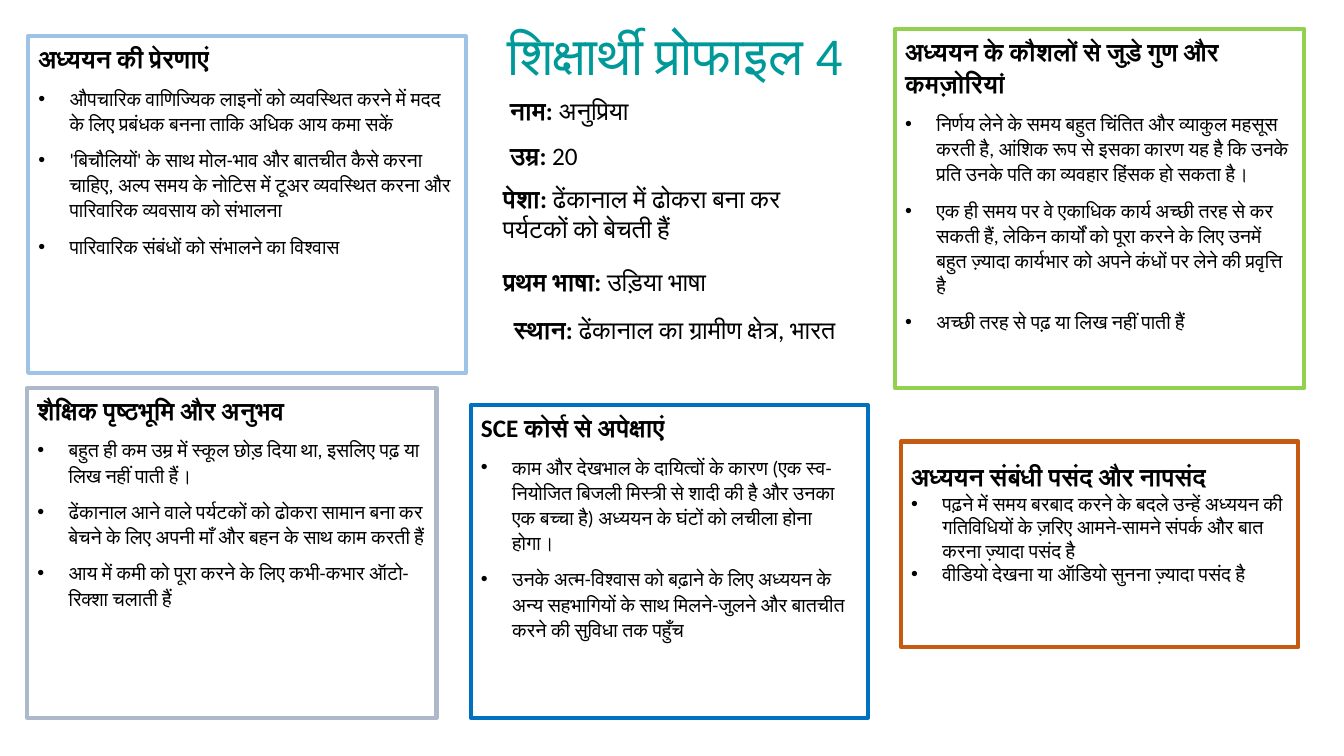
import dataclasses

import lxml.etree
import pptx
import pptx.dml.color
import pptx.enum.shapes
import pptx.enum.text
import pptx.oxml.ns
import pptx.util


@dataclasses.dataclass(frozen=True)
class Theme:
    font: str = "Calibri"
    ink: str = "000000"
    paper: str = "FFFFFF"
    title: str = "009999"
    motives: str = "9DC3E6"
    skills: str = "92D050"
    background: str = "ADB9CA"
    expectations: str = "0070C0"
    preferences: str = "C55A11"
    title_size: int = 38
    heading_size: int = 18
    list_size: int = 14
    border: int = 3
    indent: float = 0.31


def rgb(value):
    return pptx.dml.color.RGBColor.from_string(value)


class ProfileSlide:
    GRID = 100

    def __init__(self, prs, theme):
        self.prs = prs
        self.theme = theme
        self.slide = prs.slides.add_slide(prs.slide_layouts.get_by_name("Comparison"))
        self.bodies = [sp for sp in self.slide.placeholders if sp.placeholder_format.idx]

    def box(self, col, row, cols, rows):
        w = self.prs.slide_width / self.GRID
        h = self.prs.slide_height / self.GRID
        return [round(n) for n in (col * w, row * h, cols * w, rows * h)]

    def place(self, sp, area):
        sp.left, sp.top, sp.width, sp.height = self.box(*area)

    def frame(self, sp, wrap=True):
        tf = sp.text_frame
        tf.word_wrap = wrap
        tf.auto_size = pptx.enum.text.MSO_AUTO_SIZE.NONE
        tf.vertical_anchor = pptx.enum.text.MSO_ANCHOR.TOP
        return tf

    def run(self, p, text, size, bold=False, color=None):
        r = p.add_run()
        r.text = text
        r.font.size = pptx.util.Pt(size)
        r.font.bold = bold
        r.font.color.rgb = rgb(color or self.theme.ink)
        r.font.name = self.theme.font
        cs = lxml.etree.SubElement(r.font._element, pptx.oxml.ns.qn("a:cs"))
        cs.set("typeface", self.theme.font)

    def paragraph(self, p, spacing=1.0, before=0, after=0):
        p.alignment = pptx.enum.text.PP_ALIGN.LEFT
        p.line_spacing = spacing
        p.space_before = pptx.util.Pt(before)
        p.space_after = pptx.util.Pt(after)

    def bullet(self, p, char=None):
        pPr = p._p.get_or_add_pPr()
        indent = pptx.util.Inches(self.theme.indent) if char else 0
        pPr.set("marL", str(indent))
        pPr.set("indent", str(-indent))
        if char:
            font = lxml.etree.SubElement(pPr, pptx.oxml.ns.qn("a:buFont"))
            font.set("typeface", "Arial")
            lxml.etree.SubElement(pPr, pptx.oxml.ns.qn("a:buChar")).set("char", char)
        else:
            lxml.etree.SubElement(pPr, pptx.oxml.ns.qn("a:buNone"))

    def title(self, area, text):
        sp = self.slide.shapes.title
        self.place(sp, area)
        p = self.frame(sp, wrap=False).paragraphs[0]
        self.paragraph(p, spacing=0.9, before=10)
        self.run(p, text, self.theme.title_size, color=self.theme.title)

    def fact(self, area, label, value):
        sp = self.slide.shapes.add_textbox(*self.box(*area))
        p = self.frame(sp).paragraphs[0]
        self.paragraph(p)
        self.run(p, label, self.theme.heading_size, bold=True)
        self.run(p, " " + value, self.theme.heading_size)

    def fill_panel(self, sp, color, heading, items, heading_spacing, spacing, after):
        sp.shadow.inherit = False
        sp.line.color.rgb = rgb(color)
        sp.line.width = pptx.util.Pt(self.theme.border)
        tf = self.frame(sp)
        p = tf.paragraphs[0]
        self.paragraph(p, heading_spacing, after=after)
        self.bullet(p)
        self.run(p, heading, self.theme.heading_size, bold=True)
        for item in items:
            p = tf.add_paragraph()
            self.paragraph(p, spacing, after=after)
            self.bullet(p, "•")
            self.run(p, item, self.theme.list_size)

    def panel(self, area, color, heading, items):
        sp = self.bodies.pop(0)
        self.place(sp, area)
        sp.fill.solid()
        sp.fill.fore_color.rgb = rgb(self.theme.paper)
        self.fill_panel(sp, color, heading, items, 1.07, 1.07, 8)

    def open_panel(self, area, color, heading, items):
        kind = pptx.enum.shapes.MSO_SHAPE.RECTANGLE
        sp = self.slide.shapes.add_shape(kind, *self.box(*area))
        sp.fill.background()
        self.fill_panel(sp, color, heading, items, 1.5, 1.0, 0)


def main():
    prs = pptx.Presentation()
    prs.slide_width = pptx.util.Inches(13.33)
    prs.slide_height = pptx.util.Inches(7.5)
    theme = Theme()
    profile = ProfileSlide(prs, theme)

    profile.title((36.98, 3.2, 28.43, 9.07), "शिक्षार्थी प्रोफाइल 4")

    panels = [
        ((35.03, 53.6, 29.55, 41.33), theme.expectations, "SCE कोर्स से अपेक्षाएं", [
            "काम और देखभाल के दायित्वों के कारण (एक स्व-नियोजित बिजली मिस्त्री से शादी की है और उनका एक बच्चा है) अध्ययन के घंटों को लचीला होना होगा।",
            "उनके अत्म-विश्वास को बढ़ाने के लिए अध्ययन के अन्य सहभागियों के साथ मिलने-जुलने और बातचीत करने की सुविधा तक पहुँच",
        ]),
        ((2.1, 4.8, 32.55, 44.53), theme.motives, "अध्ययन की प्रेरणाएं", [
            "औपचारिक वाणिज्यिक लाइनों को व्यवस्थित करने में मदद के लिए प्रबंधक बनना ताकि अधिक आय कमा सकें",
            "'बिचौलियों' के साथ मोल-भाव और बातचीत कैसे करना चाहिए, अल्प समय के नोटिस में टूअर व्यवस्थित करना और पारिवारिक व्यवसाय को संभालना",
            "पारिवारिक संबंधों को संभालने का विश्वास",
        ]),
        ((66.6, 3.87, 30.45, 47.47), theme.skills, "अध्ययन के कौशलों से जुड़े गुण और कमज़ोरियां", [
            "निर्णय लेने के समय बहुत चिंतित और व्याकुल महसूस करती है, आंशिक रूप से इसका कारण यह है कि उनके प्रति उनके पति का व्यवहार हिंसक हो सकता है।",
            "एक ही समय पर वे एकाधिक कार्य अच्छी तरह से कर सकती हैं, लेकिन कार्यों को पूरा करने के लिए उनमें बहुत ज़्यादा कार्यभार को अपने कंधों पर लेने की प्रवृत्ति है",
            "अच्छी तरह से पढ़ या लिख नहीं पाती हैं",
        ]),
        ((2.03, 51.33, 30.45, 43.6), theme.background, "शैक्षिक पृष्ठभूमि और अनुभव", [
            "बहुत ही कम उम्र में स्कूल छोड़ दिया था, इसलिए पढ़ या लिख नहीं पाती हैं।",
            "ढेंकानाल आने वाले पर्यटकों को ढोकरा सामान बना कर बेचने के लिए अपनी माँ और बहन के साथ काम करती हैं",
            "आय में कमी को पूरा करने के लिए कभी-कभार ऑटो-रिक्शा चलाती हैं",
        ]),
    ]
    for panel in panels:
        profile.panel(*panel)

    profile.open_panel((67.05, 58.4, 29.55, 27.2), theme.preferences, "अध्ययन संबंधी पसंद और नापसंद", [
        "पढ़ने में समय बरबाद करने के बदले उन्हें अध्ययन की गतिविधियों के ज़रिए आमने-सामने संपर्क और बात करना ज़्यादा पसंद है",
        "वीडियो देखना या ऑडियो सुनना ज़्यादा पसंद है",
    ])

    facts = [
        ((37.2, 12, 28.2, 5.33), "नाम:", "अनुप्रिया"),
        ((37.2, 17.87, 23.78, 5.33), "उम्र:", "20"),
        ((36.68, 23.6, 25.88, 9.47), "पेशा:", "ढेंकानाल में ढोकरा बना कर पर्यटकों को बेचती हैं"),
        ((36.68, 34.53, 25.88, 5.33), "प्रथम भाषा:", "उड़िया भाषा"),
        ((37.5, 40.93, 25.88, 9.47), "स्थान:", "ढेंकानाल का ग्रामीण क्षेत्र, भारत"),
    ]
    for fact in facts:
        profile.fact(*fact)

    prs.save("out.pptx")


if __name__ == "__main__":
    main()
